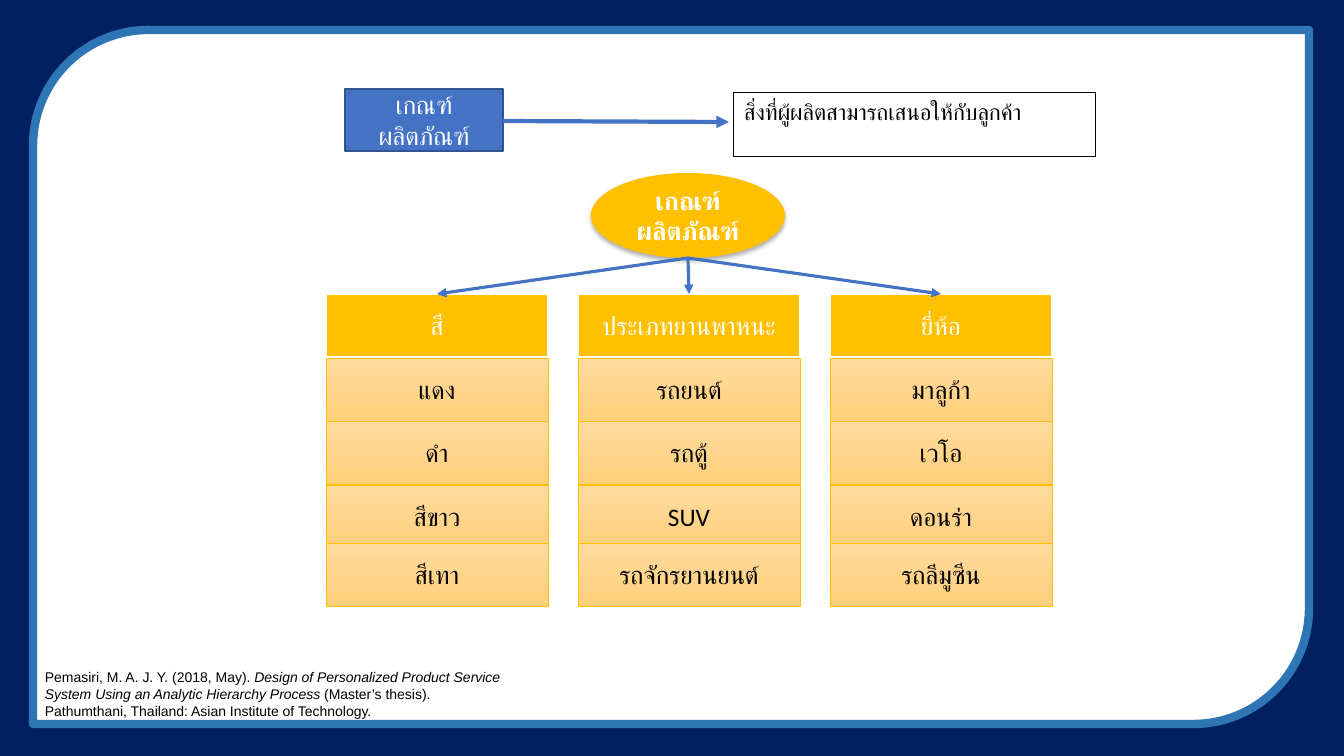
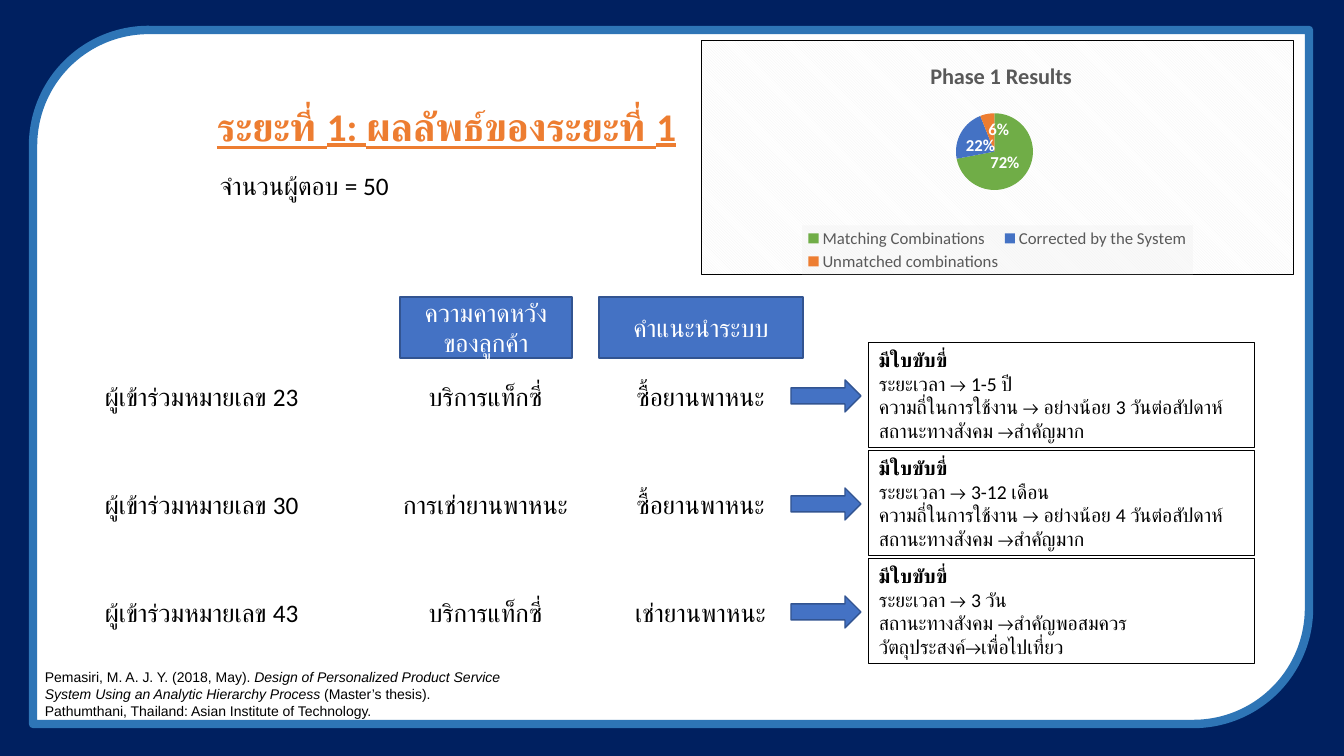
"""Build two slides on product criteria and the phase 1 survey results."""
from dataclasses import dataclass
from typing import Any, NamedTuple, Optional

import pptx
import pptx.chart.data
import pptx.dml.color
import pptx.enum.chart
import pptx.enum.dml
import pptx.enum.shapes
import pptx.enum.text
import pptx.oxml
import pptx.oxml.ns
import pptx.util

SHAPE = pptx.enum.shapes.MSO_SHAPE
ALIGN = pptx.enum.text.PP_ALIGN
ANCHOR = pptx.enum.text.MSO_ANCHOR
qn = pptx.oxml.ns.qn
NS = pptx.oxml.ns.nsdecls("a", "c")


@dataclass(frozen=True)
class Theme:
    """Colours, fonts and type sizes of the deck."""
    navy: str = "002060"
    frame: str = "2E75B6"
    blue: str = "4472C4"
    blue_edge: str = "325491"
    gold: str = "FFC000"
    sand: tuple[str, str] = ("FFDB9E", "FFD07C")
    orange: str = "ED7D31"
    green: str = "70AD47"
    grey: str = "595959"
    pale: str = "F2F2F2"
    white: str = "FFFFFF"
    black: str = "000000"
    font: str = "Calibri"
    cite_font: str = "Arial"
    title: int = 28
    body: int = 18
    note: int = 16
    detail: int = 14
    legend: int = 12
    cite: int = 10


T = Theme()


class Box(NamedTuple):
    """Left, top, width and height in px."""
    x: int
    y: int
    w: int
    h: int


class Column(NamedTuple):
    """A criterion and its options."""
    head: str
    options: tuple[str, ...]


class Participant(NamedTuple):
    """One survey row: who, what was expected and advised, and why."""
    name: str
    expected: str
    advised: str
    reasons: tuple[str, ...]


COLUMNS = (
    Column("สี", ("แดง", "ดำ", "สีขาว", "สีเทา")),
    Column("ประเภทยานพาหนะ", ("รถยนต์", "รถตู้", "SUV", "รถจักรยานยนต์")),
    Column("ยี่ห้อ", ("มาลูก้า", "เวโอ", "ดอนร่า", "รถลีมูซีน")),
)
OPTION_TOPS = (358, 421, 485, 543)
LICENCE = "มีใบขับขี่"
PARTICIPANTS = (
    Participant("ผู้เข้าร่วมหมายเลข 23", "บริการแท็กซี่", "ซื้อยานพาหนะ",
                ("ระยะเวลา → 1-5 ปี", "ความถี่ในการใช้งาน → อย่างน้อย 3 วันต่อสัปดาห์",
                 "สถานะทางสังคม →สำคัญมาก")),
    Participant("ผู้เข้าร่วมหมายเลข 30", "การเช่ายานพาหนะ", "ซื้อยานพาหนะ",
                ("ระยะเวลา → 3-12 เดือน", "ความถี่ในการใช้งาน → อย่างน้อย 4 วันต่อสัปดาห์",
                 "สถานะทางสังคม →สำคัญมาก")),
    Participant("ผู้เข้าร่วมหมายเลข 43", "บริการแท็กซี่", "เช่ายานพาหนะ",
                ("ระยะเวลา → 3 วัน", "สถานะทางสังคม →สำคัญพอสมควร",
                 "วัตถุประสงค์→เพื่อไปเที่ยว")),
)
RESULTS = (("Matching Combinations", 72, T.green),
           ("Corrected by the System", 22, T.blue),
           ("Unmatched combinations", 6, T.orange))


def px(n: int) -> int:
    """Turn px into EMU."""
    return round(n * 12192000 / 1344)


def rgb(colour: str) -> pptx.dml.color.RGBColor:
    """Turn a hex string into a colour."""
    return pptx.dml.color.RGBColor.from_string(colour)


def style(font: Any, *, size: int = T.body, color: str = T.black, name: str = T.font,
          bold: bool = False, italic: bool = False, underline: bool = False) -> None:
    """Set every property of a font."""
    font.size, font.name = pptx.util.Pt(size), name
    font.bold, font.italic, font.underline = bold, italic, underline
    font.color.rgb = rgb(color)


def write(p: Any, text: str, **fmt: Any) -> None:
    """Add a formatted run to a paragraph."""
    r = p.add_run()
    r.text = text
    style(r.font, **fmt)


def shape(s: Any, box: Box, kind: Any = SHAPE.RECTANGLE, *, fill: Any = None,
          line: Optional[str] = None, width: float = 1) -> Any:
    """Draw a preset shape with a plain, gradient or empty fill."""
    sp = s.shapes.add_shape(kind, *map(px, box))
    sp.shadow.inherit = False
    if fill is None:
        sp.fill.background()
    elif isinstance(fill, str):
        sp.fill.solid()
        sp.fill.fore_color.rgb = rgb(fill)
    else:
        sp.fill.gradient()
        sp.fill.gradient_angle = 270
        for stop, colour in zip(sp.fill.gradient_stops, fill):
            stop.color.rgb = rgb(colour)
    if line is None:
        sp.line.fill.background()
    else:
        sp.line.color.rgb = rgb(line)
        sp.line.width = pptx.util.Pt(width)
    return sp


def label(sp: Any, text: str, *, align: Any = ALIGN.CENTER, anchor: Any = ANCHOR.MIDDLE,
          **fmt: Any) -> None:
    """Write one paragraph in a shape."""
    tf = sp.text_frame
    tf.word_wrap, tf.vertical_anchor = True, anchor
    tf.paragraphs[0].alignment = align
    write(tf.paragraphs[0], text, **fmt)


def textbox(s: Any, box: Box, text: str, **fmt: Any) -> None:
    """Add a text box with one paragraph."""
    label(s.shapes.add_textbox(*map(px, box)), text, **fmt)


def arrow(s: Any, start: tuple[int, int], end: tuple[int, int], width: float) -> None:
    """Draw a straight blue arrow."""
    c = s.shapes.add_connector(pptx.enum.shapes.MSO_CONNECTOR.STRAIGHT,
                               *map(px, start + end))
    c.line.color.rgb = rgb(T.blue)
    c.line.width = pptx.util.Pt(width)
    sp_pr = c.element.spPr
    sp_pr.find(qn("a:ln")).append(pptx.oxml.parse_xml(f'<a:tailEnd {NS} type="triangle"/>'))
    sp_pr.append(pptx.oxml.parse_xml(f"<a:effectLst {NS}/>"))


def add_frame(prs: Any, s: Any) -> None:
    """Put the navy backdrop and the rounded panel on the master."""
    backdrop = shape(s, Box(0, 0, 1344, 756), fill=T.navy)
    panel = shape(s, Box(33, 30, 1276, 694), SHAPE.ROUND_2_DIAG_RECTANGLE,
                  fill=T.white, line=T.frame, width=6)
    for sp in (backdrop, panel):
        prs.slide_master.shapes.element.append(sp.element)


def add_citation(s: Any) -> None:
    """Write the source at the bottom left."""
    tf = s.shapes.add_textbox(*map(px, Box(35, 664, 486, 61))).text_frame
    tf.word_wrap = True
    for text, italic in (
            ("Pemasiri, M. A. J. Y. (2018, May). ", False),
            ("Design of Personalized Product Service System Using an Analytic "
             "Hierarchy Process ", True),
            ("(Master’s thesis). Pathumthani, Thailand: Asian Institute of Technology.", False)):
        write(tf.paragraphs[0], text, size=T.cite, name=T.cite_font, italic=italic)


def criteria_slide(s: Any) -> None:
    """Show the product criteria as a tree of options."""
    criterion = "เกณฑ์ผลิตภัณฑ์"
    label(shape(s, Box(345, 89, 158, 62), fill=T.blue, line=T.blue_edge),
          criterion, color=T.white)
    arrow(s, (503, 121), (729, 122), 3)
    label(shape(s, Box(734, 93, 362, 64), line=T.black, width=0.75),
          "สิ่งที่ผู้ผลิตสามารถเสนอให้กับลูกค้า", size=T.note, align=ALIGN.LEFT, anchor=ANCHOR.TOP)
    root = shape(s, Box(591, 173, 194, 85), SHAPE.OVAL, fill=T.gold)
    root.element.spPr.find(qn("a:effectLst")).append(pptx.oxml.parse_xml(
        f'<a:outerShdw {NS} blurRad="44450" dist="27940" dir="5400000">'
        f'<a:srgbClr val="{T.black}"><a:alpha val="32000"/></a:srgbClr></a:outerShdw>'))
    label(root, criterion, color=T.white, bold=True)
    left, pitch, width, height, top = 326, 252, 222, 63, 294
    for i, column in enumerate(COLUMNS):
        x = left + i * pitch
        label(shape(s, Box(x, top, width, height), fill=T.gold, line=T.white, width=1.5),
              column.head, color=T.white)
        arrow(s, (688, 258), (x + width // 2, top), 2.25)
        for y, option in zip(OPTION_TOPS, column.options):
            label(shape(s, Box(x, y, width, height), fill=T.sand, line=T.gold, width=0.5),
                  option)


def place(parent: Any, index: int, **fractions: float) -> None:
    """Give a chart part a fixed place, as fractions of the chart."""
    for old in parent.findall(qn("c:layout")):
        parent.remove(old)
    inner = '<c:layoutTarget val="inner"/>' if index == 0 else ""
    modes = '<c:xMode val="edge"/><c:yMode val="edge"/>'
    values = "".join(f'<c:{key} val="{value}"/>' for key, value in fractions.items())
    parent.insert(index, pptx.oxml.parse_xml(
        f"<c:layout {NS}><c:manualLayout>{inner}{modes}{values}</c:manualLayout></c:layout>"))


def add_pie(s: Any) -> None:
    """Chart the phase 1 results."""
    data = pptx.chart.data.CategoryChartData()
    data.categories = [name for name, _, _ in RESULTS]
    data.add_series("Series 1", [value for _, value, _ in RESULTS])
    chart = s.shapes.add_chart(pptx.enum.chart.XL_CHART_TYPE.PIE,
                               *map(px, Box(701, 40, 593, 235)), data).chart
    style(chart.font, size=T.cite)
    chart.has_title = chart.has_legend = True
    write(chart.chart_title.text_frame.paragraphs[0], "Phase 1 Results",
          size=T.note, color=T.grey, bold=True)
    legend = chart.legend
    legend.position = pptx.enum.chart.XL_LEGEND_POSITION.BOTTOM
    legend.include_in_layout = False
    style(legend.font, size=T.legend, color=T.grey)
    plot = chart.plots[0]
    plot.vary_by_categories = True
    for i, (_, _, colour) in enumerate(RESULTS):
        fill = plot.series[0].points[i].format.fill
        fill.solid()
        fill.fore_color.rgb = rgb(colour)
    plot.has_data_labels = True
    labels = plot.data_labels
    labels.show_value, labels.show_percentage = False, True
    labels.position = pptx.enum.chart.XL_LABEL_POSITION.INSIDE_END
    style(labels.font, size=T.legend, color=T.white, bold=True)

    root = chart.element.find(qn("c:chart"))
    place(root.find(qn("c:title")), 1, x=0.38, y=0.07)
    place(root.find(qn("c:plotArea")), 0, x=0.43, y=0.31, w=0.13, h=0.33)
    key = root.find(qn("c:legend"))
    place(key, 1, x=0.17, y=0.79, w=0.66, h=0.21)
    key.find(qn("c:overlay")).addnext(pptx.oxml.parse_xml(
        f'<c:spPr {NS}><a:solidFill><a:srgbClr val="{T.pale}"><a:alpha val="39000"/>'
        f"</a:srgbClr></a:solidFill></c:spPr>"))
    root.addnext(pptx.oxml.parse_xml(
        f'<c:spPr {NS}><a:pattFill prst="dkDnDiag"><a:fgClr><a:srgbClr val="{T.pale}"/></a:fgClr>'
        f'<a:bgClr><a:srgbClr val="{T.white}"/></a:bgClr></a:pattFill><a:ln w="9525">'
        f'<a:solidFill><a:srgbClr val="{T.black}"/></a:solidFill></a:ln></c:spPr>'))


def results_slide(s: Any) -> None:
    """Show the phase 1 chart and three participants."""
    textbox(s, Box(207, 94, 495, 63), "ระยะที่ 1: ผลลัพธ์ของระยะที่ 1", size=T.title,
            color=T.orange, bold=True, underline=True, align=ALIGN.LEFT)
    textbox(s, Box(210, 154, 463, 63), "จำนวนผู้ตอบ = 50", align=ALIGN.LEFT)
    add_pie(s)
    for x, width, head in ((400, 172, "ความคาดหวังของลูกค้า"), (599, 204, "คำแนะนำระบบ")):
        label(shape(s, Box(x, 297, width, 61), fill=T.blue, line=T.blue_edge),
              head, color=T.white)
    for i, who in enumerate(PARTICIPANTS):
        y = 376 + i * 108
        for x, text, align in ((95, who.name, ALIGN.LEFT), (373, who.expected, ALIGN.CENTER),
                               (588, who.advised, ALIGN.CENTER)):
            textbox(s, Box(x, y, 225, 40), text, align=align, anchor=ANCHOR.TOP)
        shape(s, Box(791, y + 4, 70, 32), SHAPE.RIGHT_ARROW, fill=T.blue, line=T.blue_edge)
        reasons = shape(s, Box(869, y - 33, 386, 105), line=T.black, width=0.75)
        label(reasons, LICENCE, size=T.detail, bold=True, align=ALIGN.LEFT, anchor=ANCHOR.TOP)
        for reason in who.reasons:
            p = reasons.text_frame.add_paragraph()
            p.alignment = ALIGN.LEFT
            write(p, reason, size=T.detail)


def main() -> None:
    """Build and save the deck."""
    prs = pptx.Presentation()
    prs.slide_width, prs.slide_height = px(1344), px(756)
    for i, draw in enumerate((criteria_slide, results_slide)):
        s = prs.slides.add_slide(prs.slide_layouts[6])
        if i == 0:
            add_frame(prs, s)
        draw(s)
        add_citation(s)
    prs.save("out.pptx")


if __name__ == "__main__":
    main()
